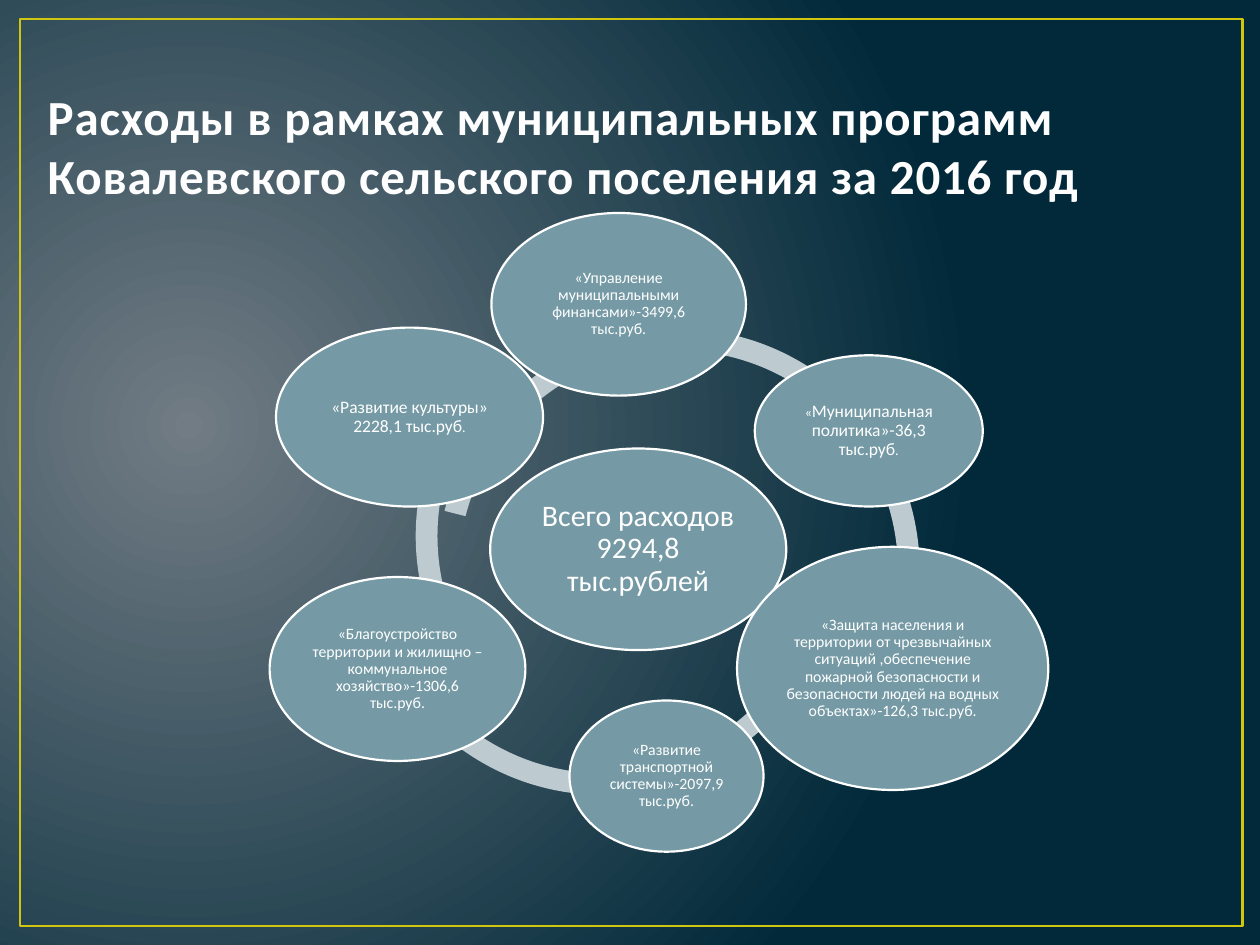
from lxml import etree
from pptx import Presentation
from pptx.dml.color import RGBColor
from pptx.enum.shapes import MSO_SHAPE as Preset
from pptx.enum.text import MSO_ANCHOR as Anchor, PP_ALIGN as Align
from pptx.oxml.ns import qn
from pptx.util import Inches, Pt

COLORS = {
    "glow": "717C84",
    "night": "01293A",
    "frame": "CFC60D",
    "title": "FEFEFE",
    "outline": "384F55",
    "ring": "BDCACF",
    "bubble": "759AA5",
    "white": "FFFFFF",
}
FONT = "Calibri"
RING_SIZE = 3.83
RING_WIDTH = 0.045
DEGREE = 0.6

ARCS = [
    (2.94, 2.37, 126.73, 163.06),
    (2.87, 2.48, 90.43, 129.09),
    (2.85, 2.45, 44.18, 89.78),
    (3.59, 2.38, 19.57, 57.94),
    (3.47, 2.61, 194.2, 14.78),
    (3.3, 2.34, 156.34, 199.94),
]

BUBBLES = [
    ((3.89, 3.56, 2.35, 1.6), [("Всего расходов 9294,8 тыс.рублей", 17)]),
    ((3.9, 1.69, 2.02, 1.45),
     [("«Управление муниципальными финансами»-3499,6 тыс.руб.", 9)]),
    ((5.99, 2.82, 1.81, 1.2),
     [("«", 8), ("Муниципальная политика»-36,3 тыс.руб", 10), (".", 8)]),
    ((5.85, 4.34, 2.47, 1.93),
     [("«Защита населения и территории от чрезвычайных ситуаций ,обеспечение "
       "пожарной безопасности и безопасности людей на водных объектах»-126,3 тыс.руб.", 9)]),
    ((4.52, 5.56, 1.54, 1.2),
     [("«Развитие транспортной системы»-2097,9 тыс.руб.", 9)]),
    ((2.14, 4.58, 2.03, 1.46),
     [("«Благоустройство территории и жилищно –коммунальное хозяйство»-1306,6 тыс.руб.", 9)]),
    ((2.19, 2.6, 2.12, 1.42),
     [("«Развитие культуры» 2228,1 тыс.руб", 10), (".", 8)]),
]


def rgb(name):
    return RGBColor.from_string(COLORS[name])


def add_span(para, text, size, color="white", bold=False, spacing=None, outline=None):
    span = para.add_run()
    span.text = text
    span.font.name = FONT
    span.font.size = Pt(size)
    span.font.bold = bold
    span.font.color.rgb = rgb(color)
    props = span.font._element
    if spacing:
        props.set("spc", str(int(spacing * 100)))
    if outline:
        line = etree.Element(qn("a:ln"), w=str(Pt(1.05)))
        fill = etree.SubElement(line, qn("a:solidFill"))
        etree.SubElement(fill, qn("a:srgbClr"), val=COLORS[outline])
        props.insert(0, line)
    return span


def add_preset(slide, preset, box, fill=None, line=None, width=1.25):
    shape = slide.shapes.add_shape(preset, *map(Inches, box))
    shape.shadow.inherit = False
    if fill:
        shape.fill.solid()
        shape.fill.fore_color.rgb = rgb(fill)
    else:
        shape.fill.background()
    if line:
        shape.line.color.rgb = rgb(line)
        shape.line.width = Pt(width)
    else:
        shape.line.fill.background()
    return shape


def paint_background(slide):
    fill = slide.background.fill
    fill.gradient()
    for stop, name in zip(fill.gradient_stops, ("glow", "night")):
        stop.color.rgb = rgb(name)
    gradient = slide.element.find(".//" + qn("a:gradFill"))
    gradient.remove(gradient.find(qn("a:lin")))
    circle = etree.Element(qn("a:path"), path="circle")
    etree.SubElement(circle, qn("a:fillToRect"), l="15000", t="50000", r="85000", b="60000")
    gradient.find(qn("a:gsLst")).addnext(circle)


def add_title(slide, box):
    frame = slide.shapes.add_textbox(*map(Inches, box)).text_frame
    frame.word_wrap = True
    frame.vertical_anchor = Anchor.BOTTOM
    add_span(frame.paragraphs[0],
             "Расходы в рамках муниципальных программ Ковалевского сельского поселения за 2016 год",
             size=28, color="title", bold=True, spacing=0.5, outline="outline")


def add_arc(slide, box, start, end):
    arc = add_preset(slide, Preset.BLOCK_ARC, box, fill="ring")
    arc.adjustments[0] = start * DEGREE
    arc.adjustments[1] = end * DEGREE
    arc.adjustments[2] = RING_WIDTH


def add_bubble(slide, box, spans):
    bubble = add_preset(slide, Preset.OVAL, box, fill="bubble", line="white")
    frame = bubble.text_frame
    frame.word_wrap = True
    frame.vertical_anchor = Anchor.MIDDLE
    margin = Inches(0.01)
    frame.margin_left = frame.margin_right = margin
    frame.margin_top = frame.margin_bottom = margin
    para = frame.paragraphs[0]
    para.alignment = Align.CENTER
    para.line_spacing = 0.9
    for text, size in spans:
        add_span(para, text, size=size)


def main():
    deck = Presentation()
    deck.slide_width, deck.slide_height = Inches(10), Inches(7.5)
    slide = deck.slides.add_slide(deck.slide_layouts[6])
    paint_background(slide)
    add_preset(slide, Preset.RECTANGLE, (0.16, 0.15, 9.7, 7.2), line="frame", width=1.5)
    add_title(slide, (0.28, 0.36, 8.58, 1.31))
    for left, top, start, end in ARCS:
        add_arc(slide, (left, top, RING_SIZE, RING_SIZE), start, end)
    for box, spans in BUBBLES:
        add_bubble(slide, box, spans)
    deck.save("out.pptx")


if __name__ == "__main__":
    main()
